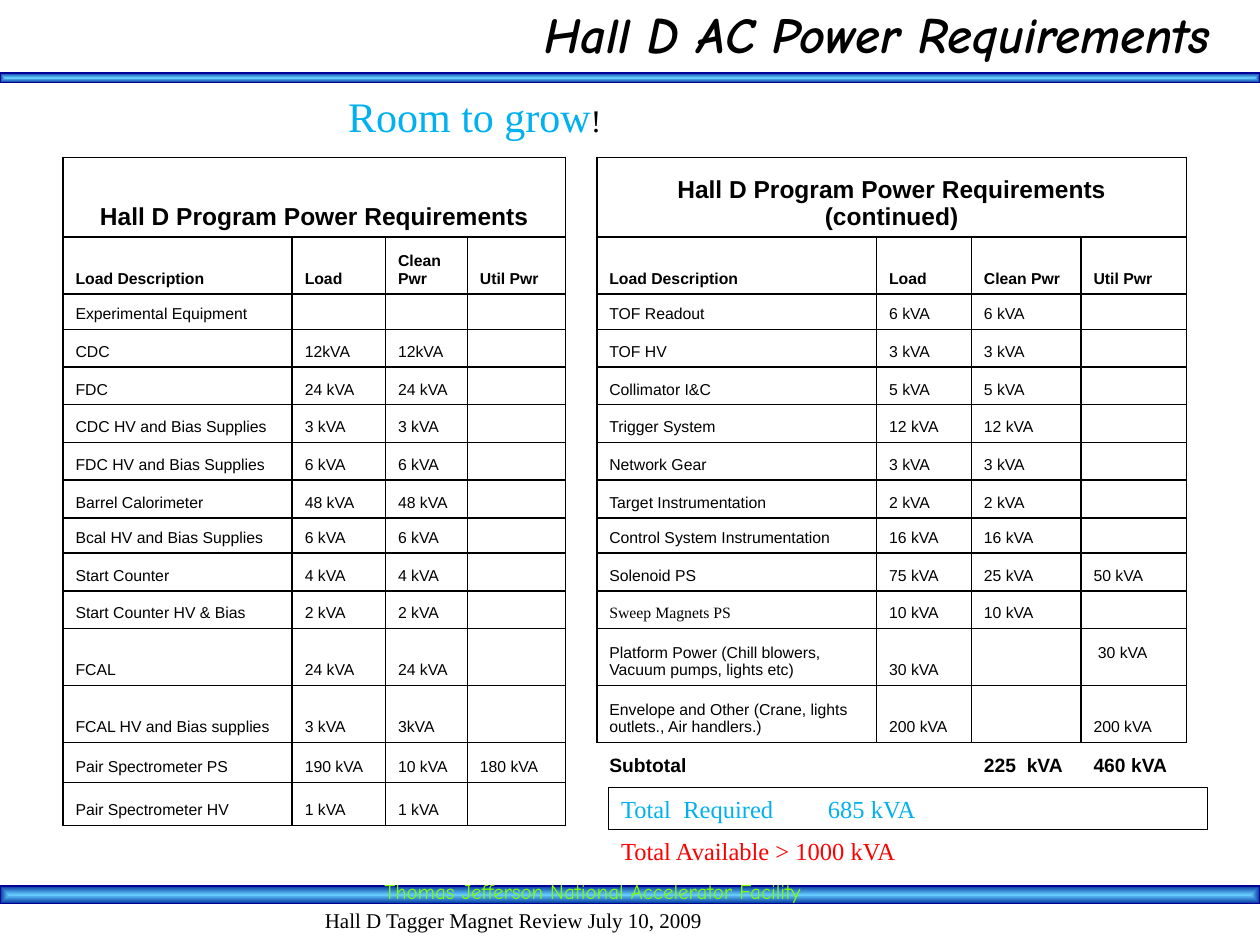
from lxml import etree
from pptx import Presentation
from pptx import util as u
from pptx.dml.color import RGBColor
from pptx.enum import shapes, text
from pptx.oxml import ns

BLACK = RGBColor(0, 0, 0)
WHITE = RGBColor(255, 255, 255)
SKY = RGBColor(0, 0xB0, 0xF0)
RED = RGBColor(255, 0, 0)
LIME = RGBColor(0x80, 255, 0)
NAVY = RGBColor(0, 0, 0x99)
PALE = RGBColor(0x66, 0xCC, 255)
DEEP = RGBColor(0, 0x33, 0x99)

ARIAL, SERIF, COMIC = "Arial", "Times New Roman", "Comic Neue"
PAD = (0.25, 0.13, 0.25, 0.13)

COLS = [4.62, 1.88, 1.65, 1.98, 0.63, 5.64, 1.91, 2.21, 2.13]
TALL = {0: 1.61, 1: 1.15, 2: 0.71, 8: 0.71, 11: 1.15, 12: 1.15, 13: 0.81, 14: 0.86}
GAP, HEAD, SUM = 4, 1, 13

HEADS = ["Load Description", "Load", "Clean Pwr", "Util Pwr"]
LEFT = [
    ["Hall D Program Power Requirements"],
    HEADS,
    ["Experimental Equipment"],
    ["CDC", "12kVA", "12kVA"],
    ["FDC", "24 kVA", "24 kVA"],
    ["CDC HV and Bias Supplies", "3 kVA", "3 kVA"],
    ["FDC HV and Bias Supplies", "6 kVA", "6 kVA"],
    ["Barrel Calorimeter", "48 kVA", "48 kVA"],
    ["Bcal HV and Bias Supplies", "6 kVA", "6 kVA"],
    ["Start Counter", "4 kVA", "4 kVA"],
    ["Start Counter HV & Bias", "2 kVA", "2 kVA"],
    ["FCAL", "24 kVA", "24 kVA"],
    ["FCAL HV and Bias supplies", "3 kVA", "3kVA"],
    ["Pair Spectrometer PS", "190 kVA", "10 kVA", "180 kVA"],
    ["Pair Spectrometer HV", "1 kVA", "1 kVA"],
]
RIGHT = [
    ["Hall D Program Power Requirements (continued)"],
    HEADS,
    ["TOF Readout", "6 kVA", "6 kVA"],
    ["TOF HV", "3 kVA", "3 kVA"],
    ["Collimator I&C", "5 kVA", "5 kVA"],
    ["Trigger System", "12 kVA", "12 kVA"],
    ["Network Gear", "3 kVA", "3 kVA"],
    ["Target Instrumentation", "2 kVA", "2 kVA"],
    ["Control System Instrumentation", "16 kVA", "16 kVA"],
    ["Solenoid PS", "75 kVA", "25 kVA", "50 kVA"],
    ["Sweep Magnets PS", "10 kVA", "10 kVA"],
    ["Platform Power (Chill blowers, Vacuum pumps, lights etc)", "30 kVA", "", " 30 kVA"],
    ["Envelope and Other (Crane, lights outlets., Air handlers.)", "200 kVA", "", "200 kVA"],
    ["Subtotal", "", "225  kVA", "460 kVA"],
    [],
]


def style(font, **form):
    """Set font attributes; a colour goes to font.color."""
    font.color.rgb = form.pop("color", BLACK)
    for key, val in form.items():
        setattr(font, key, val)


def write(para, words, **form):
    run = para.add_run()
    run.text = words
    style(run.font, **form)


def label(slide, box, pad=PAD, kind=None):
    """Add a text box, or a white rectangle, and return it with its paragraph."""
    place = [u.Cm(v) for v in box]
    if kind:
        item = slide.shapes.add_shape(kind, *place)
        item.shadow.inherit = False
        item.fill.solid()
        item.fill.fore_color.rgb = WHITE
        item.line.fill.background()
    else:
        item = slide.shapes.add_textbox(*place)
    frame = item.text_frame
    sides = zip(("left", "top", "right", "bottom"), pad)
    form = {f"margin_{side}": u.Cm(v) for side, v in sides}
    form.update(word_wrap=True, vertical_anchor=text.MSO_ANCHOR.TOP)
    for key, val in form.items():
        setattr(frame, key, val)
    para = frame.paragraphs[0]
    para.alignment = text.PP_ALIGN.LEFT
    return item, para


def bar(slide, box):
    """Glowing band across the slide."""
    band = slide.shapes.add_shape(shapes.MSO_SHAPE.RECTANGLE, *[u.Cm(v) for v in box])
    band.shadow.inherit = False
    band.line.color.rgb = NAVY
    band.line.width = u.Pt(0.75)
    band.fill.gradient()
    for stop, tone, pos in zip(band.fill.gradient_stops, (PALE, DEEP), (0, 1)):
        stop.color.rgb = tone
        stop.position = pos
    grad = band.fill._xPr.find(ns.qn("a:gradFill"))
    grad.remove(grad.find(ns.qn("a:lin")))
    way = etree.SubElement(grad, ns.qn("a:path"), path="shape")
    etree.SubElement(way, ns.qn("a:fillToRect"), dict.fromkeys("ltrb", "50000"))


def header(slide, box):
    x, y, w, h = box
    bar(slide, (x, y + 1.47, w, 0.2))
    item, para = label(slide, (x, y, w, h), (0.25, 0.13, 1, 0.13))
    item.text_frame.vertical_anchor = text.MSO_ANCHOR.MIDDLE
    para.alignment = text.PP_ALIGN.RIGHT
    write(para, "Hall D AC Power Requirements", name=COMIC, size=u.Pt(28.8), bold=True, italic=True)


def footer(slide, box):
    x, y, w, h = box
    bar(slide, (x, y, w, 0.36))
    lines = [
        ("Thomas Jefferson National Accelerator Facility", (7.75, -0.06, 11, 0.5), None, COMIC, LIME),
        ("Hall D Tagger Magnet Review July 10, 2009", (6.55, 0.53, 13.77, 0.41),
         shapes.MSO_SHAPE.RECTANGLE, SERIF, BLACK),
    ]
    for words, (dx, dy, wide, high), kind, face, tone in lines:
        para = label(slide, (x + dx, y + dy, wide, high), (0, 0, 0, 0), kind)[1]
        para.line_spacing = 0.8
        write(para, words, name=face, size=u.Pt(12), color=tone)


def edges(row, col):
    """Sides of a cell that carry a rule."""
    if col < GAP:
        return "LRTB"
    if col == GAP:
        return "LR" if row < SUM else "L"
    return "LRTB" if row < SUM else "T" if row == SUM else ""


def rule(cell, sides):
    props = cell._tc.get_or_add_tcPr()
    for side in "LRTB":
        line = etree.SubElement(props, ns.qn(f"a:ln{side}"), w="12700")
        if side in sides:
            fill = etree.SubElement(line, ns.qn("a:solidFill"))
            etree.SubElement(fill, ns.qn("a:srgbClr"), val=str(BLACK))
        else:
            etree.SubElement(line, ns.qn("a:noFill"))


def loads(slide, box):
    """Both load lists in one table, with an open column between them."""
    grid = slide.shapes.add_table(len(LEFT), len(COLS), *[u.Cm(v) for v in box]).table
    grid.first_row = grid.horz_banding = False
    for col, wide in zip(grid.columns, COLS):
        col.width = u.Cm(wide)
    for row, line in enumerate(grid.rows):
        line.height = u.Cm(TALL.get(row, 0.76))
        left, right = [part[row] + [""] * (4 - len(part[row])) for part in (LEFT, RIGHT)]
        for col, words in enumerate(left + [""] + right):
            cell = grid.cell(row, col)
            rule(cell, edges(row, col))
            cell.fill.background()
            cell.vertical_anchor = text.MSO_ANCHOR.BOTTOM
            para = cell.text_frame.paragraphs[0]
            if not words:
                etree.SubElement(para._p, ns.qn("a:endParaRPr"), sz="900")
                continue
            total = row == SUM and col > GAP
            size = 14 if row == 0 else 11 if total else 9
            face = SERIF if words.startswith("Sweep") else ARIAL
            write(para, words, name=face, size=u.Pt(size), bold=row <= HEAD or total)
            if row == 0:
                para.alignment = text.PP_ALIGN.CENTER
    for col in (0, GAP + 1):
        grid.cell(0, col).merge(grid.cell(0, col + 3))
    # The platform utility value sits one line higher
    grid.cell(11, 8).margin_bottom = u.Cm(0.47)


def totals(slide, box):
    x, y, w, h = box
    item, para = label(slide, (x, y, w, h), kind=shapes.MSO_SHAPE.RECTANGLE)
    item.line.color.rgb = BLACK
    item.line.width = u.Pt(0.75)
    tabs = etree.SubElement(para._p.get_or_add_pPr(), ns.qn("a:tabLst"))
    etree.SubElement(tabs, ns.qn("a:tab"), pos=str(u.Cm(4.17)), algn="l")
    form = {"name": SERIF, "size": u.Pt(14)}
    write(para, "Total  Required\t685 kVA", color=SKY, **form)
    para = label(slide, (x, y + h, w, h))[1]
    write(para, "Total Available > 1000 kVA", color=RED, **form)


def motto(slide, box):
    para = label(slide, box)[1]
    write(para, "Room to grow", name=SERIF, size=u.Pt(24), color=SKY)
    write(para, "!", name=SERIF, size=u.Pt(18))


def main():
    deck = Presentation()
    deck.slide_width, deck.slide_height = u.Cm(25.4), u.Cm(19.05)
    slide = deck.slides.add_slide(deck.slide_layouts[6])
    footer(slide, (0, 17.86, 25.4, 1.19))
    header(slide, (0, 0, 25.4, 1.35))
    loads(slide, (1.27, 3.17, 22.65, 13.47))
    totals(slide, (12.27, 15.88, 12.07, 0.85))
    motto(slide, (6.77, 1.7, 12.28, 1.27))
    deck.save("out.pptx")


if __name__ == "__main__":
    main()
